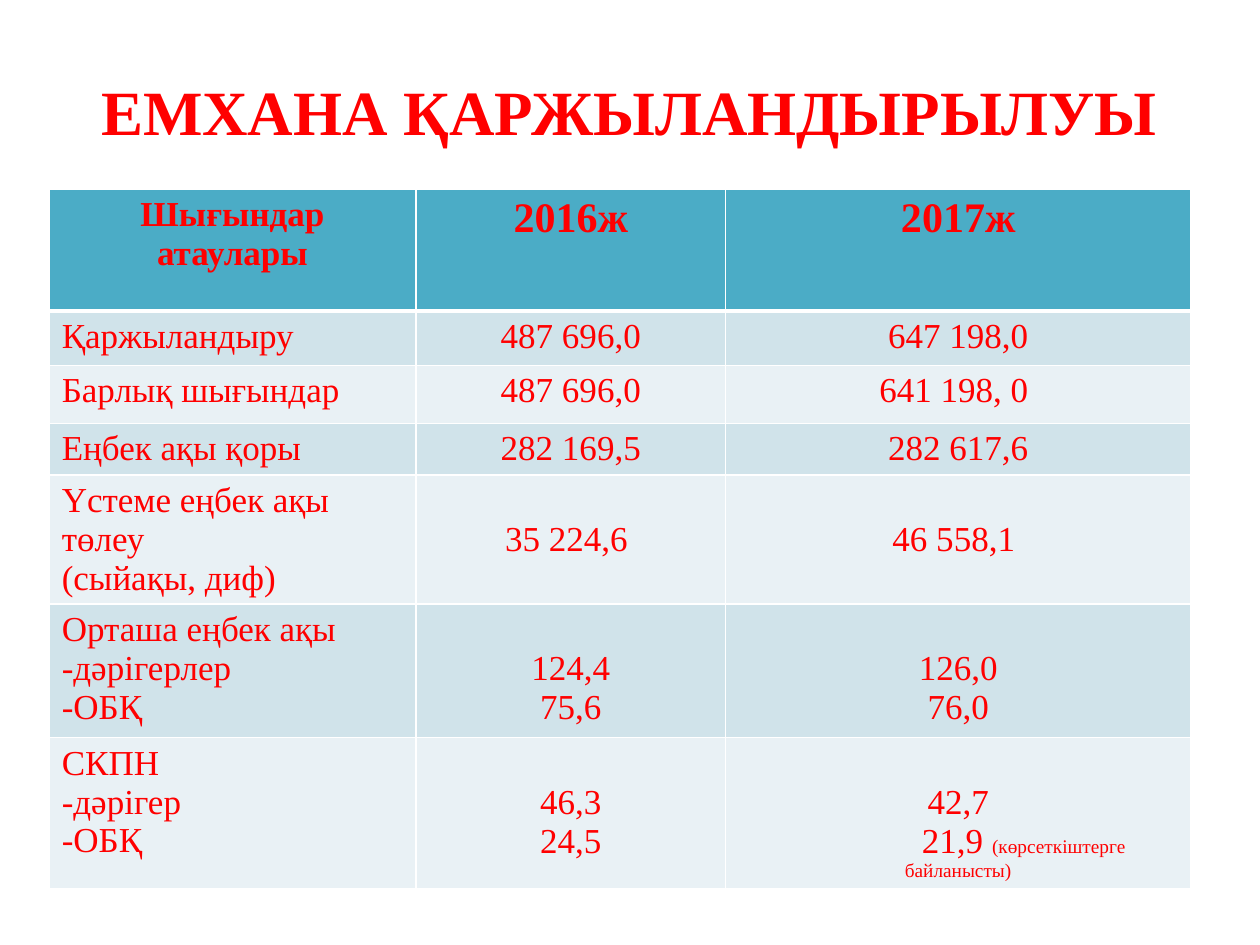
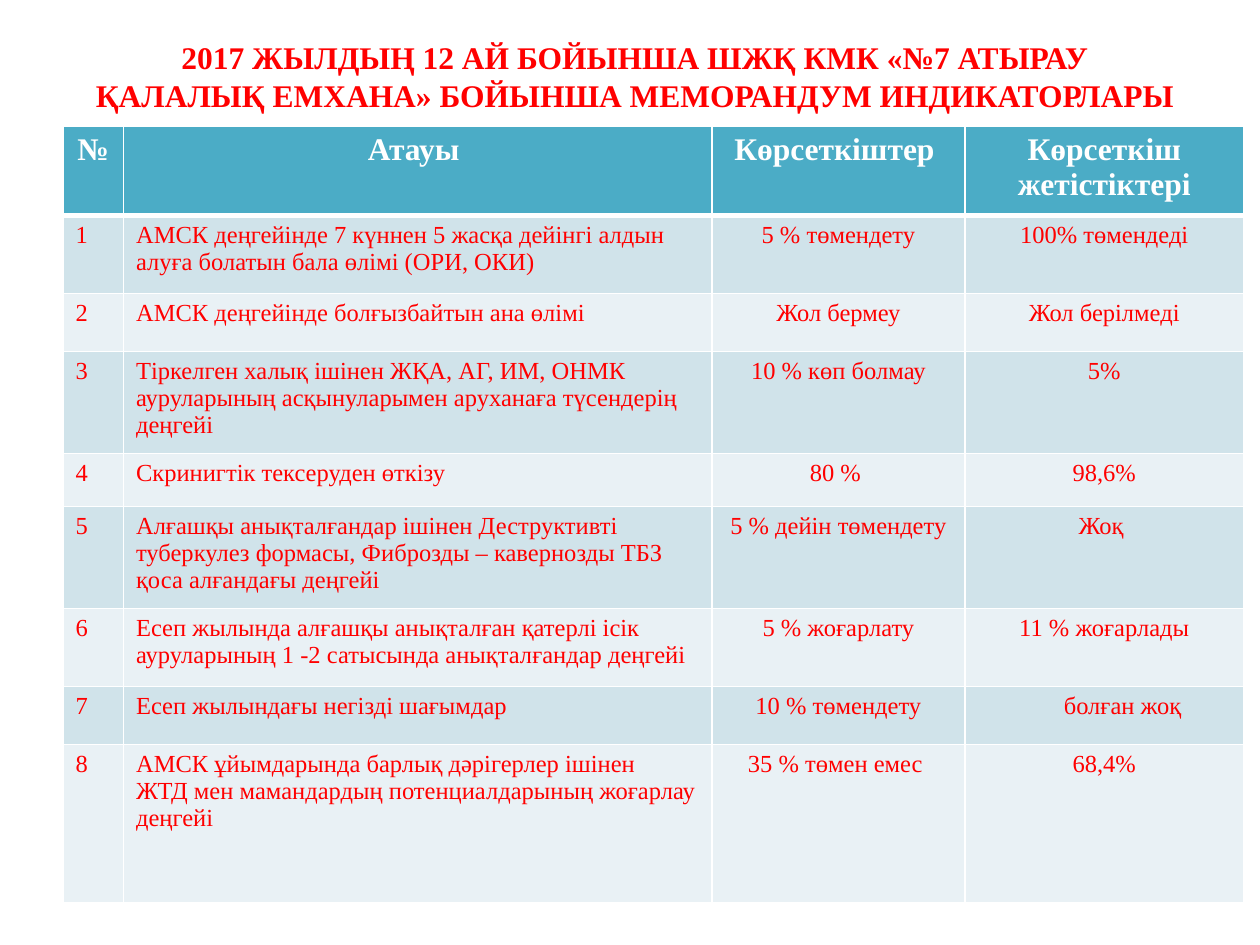
from dataclasses import dataclass
from lxml.etree import SubElement
from pptx import Presentation
from pptx.dml.color import RGBColor
from pptx.enum.text import MSO_ANCHOR, PP_ALIGN
from pptx.oxml.ns import qn
from pptx.util import Inches, Pt


@dataclass(frozen=True)
class Theme:
    face: str = "Times New Roman"
    red: str = "FF0000"
    white: str = "FFFFFF"
    head: str = "4BACC6"
    bands: tuple = ("D0E3EA", "E9F1F5")
    title: int = 36
    year: int = 24
    body: int = 20
    label: int = 18
    small: int = 14
    note: int = 11
    thin: int = 1
    thick: int = 3


THEME = Theme()

COSTS = [
    ("Шығындар атаулары", "2016ж", "2017ж"),
    ("Қаржыландыру", "487 696,0", "647 198,0"),
    ("Барлық шығындар", "487 696,0", "641 198, 0 "),
    ("Еңбек ақы қоры", "282 169,5", "282 617,6"),
    ("Үстеме еңбек ақы төлеу\n(сыйақы, диф)", "35 224,6 ", "46 558,1 "),
    ("Орташа еңбек ақы\n-дәрігерлер\n-ОБҚ", "124,4\n75,6", "126,0\n76,0"),
    ("СКПН\n-дәрігер\n-ОБҚ", "46,3\n24,5", "42,7\n21,9 "),
]

GOALS = [
    ("№", "Атауы ", "Көрсеткіштер ", "Көрсеткіш жетістіктері"),
    ("1", "АМСК деңгейінде 7 күннен 5 жасқа дейінгі алдын алуға болатын бала өлімі (ОРИ, ОКИ)",
     "5 % төмендету", "100% төмендеді"),
    ("2", "АМСК деңгейінде болғызбайтын ана өлімі", "Жол бермеу", "Жол берілмеді"),
    ("3", "Тіркелген халық ішінен ЖҚА, АГ, ИМ, ОНМК ауруларының асқынуларымен "
     "аруханаға түсендерің деңгейі", "10 % көп болмау", "5%"),
    ("4", "Скринигтік тексеруден өткізу", "80 % ", "98,6%"),
    ("5", "Алғашқы анықталғандар ішінен Деструктивті туберкулез формасы, "
     "Фиброзды – кавернозды ТБЗ қоса алғандағы деңгейі", "5 % дейін төмендету", "Жоқ "),
    ("6", "Есеп жылында алғашқы анықталған қатерлі ісік ауруларының 1 -2 сатысында "
     "анықталғандар деңгейі", "5 % жоғарлату", "11 % жоғарлады"),
    ("7", "Есеп жылындағы негізді шағымдар", "10 % төмендету", "болған жоқ"),
    ("8", "АМСК ұйымдарында барлық дәрігерлер ішінен\vЖТД мен мамандардың "
     "потенциалдарының жоғарлау деңгейі", "35 % төмен емес ", "68,4%"),
]


def style(para, size, color, bold, align):
    para.alignment = align
    font = para.font
    font.name = THEME.face
    font.size = Pt(size)
    font.bold = bold
    font.color.rgb = RGBColor.from_string(color)


def add_slide(deck, text, size, box):
    slide = deck.slides.add_slide(deck.slide_layouts[5])
    title = slide.shapes.title
    title.left, title.top, title.width, title.height = map(Inches, box)
    frame = title.text_frame
    frame.word_wrap = True
    frame.vertical_anchor = MSO_ANCHOR.MIDDLE
    frame.text = text
    style(frame.paragraphs[0], size, THEME.red, True, PP_ALIGN.CENTER)
    return slide


def add_edges(cell, row):
    props = cell._tc.get_or_add_tcPr()
    heavy = {0: "lnB", 1: "lnT"}.get(row)
    for side in ("lnL", "lnR", "lnT", "lnB"):
        width = THEME.thick if side == heavy else THEME.thin
        line = SubElement(props, qn(f"a:{side}"), w=str(Pt(width)))
        fill = SubElement(line, qn("a:solidFill"))
        SubElement(fill, qn("a:srgbClr"), val=THEME.white)


def fill_cell(cell, text, row, size, color, align):
    add_edges(cell, row)
    shade = THEME.bands[(row - 1) % 2] if row else THEME.head
    cell.fill.solid()
    cell.fill.fore_color.rgb = RGBColor.from_string(shade)
    cell.text_frame.text = text
    for para in cell.text_frame.paragraphs:
        style(para, size, color, row == 0, align)


def add_grid(slide, data, spot, widths, heights, heads, ink, size, left):
    left_in, top = spot
    frame = slide.shapes.add_table(
        len(data), len(widths), Inches(left_in), Inches(top),
        Inches(sum(widths)), Inches(sum(heights)))
    grid = frame.table
    for col, width in zip(grid.columns, widths):
        col.width = Inches(width)
    for line, height in zip(grid.rows, heights):
        line.height = Inches(height)
    for row, texts in enumerate(data):
        for col, text in enumerate(texts):
            cell = grid.cell(row, col)
            align = PP_ALIGN.LEFT if row and col < left else PP_ALIGN.CENTER
            fill_cell(cell, text, row, size if row else heads[col],
                      THEME.red if row else ink, align)
            if col and "\n" in texts[0]:
                cell.margin_top = Inches(0.36)
    return grid


def indent(para, inches):
    para._p.get_or_add_pPr().set("indent", str(Inches(inches)))


def add_costs(deck):
    slide = add_slide(deck, "ЕМХАНА ҚАРЖЫЛАНДЫРЫЛУЫ", THEME.title, (0.66, 0.52, 8.67, 0.71))
    grid = add_grid(
        slide, COSTS, (0.39, 1.5), (2.91, 2.46, 3.69),
        (0.97, 0.43, 0.46, 0.41, 0.99, 1.06, 1.06),
        (THEME.body, THEME.year, THEME.year), THEME.red, THEME.body, 1)
    para = grid.cell(6, 2).text_frame.paragraphs[-1]
    indent(para, 1.04)
    note = para.add_run()
    note.text = "(көрсеткіштерге байланысты)"
    note.font.size = Pt(THEME.note)


def add_goals(deck):
    text = ("2017 ЖЫЛДЫҢ 12 АЙ БОЙЫНША ШЖҚ КМК «№7 АТЫРАУ\v"
            "ҚАЛАЛЫҚ ЕМХАНА» БОЙЫНША МЕМОРАНДУМ ИНДИКАТОРЛАРЫ")
    slide = add_slide(deck, text, THEME.label, (0.47, 0.25, 9.14, 0.71))
    grid = add_grid(
        slide, GOALS, (0.5, 1), (0.48, 4.67, 2.01, 2.21),
        (0.71, 0.62, 0.46, 0.81, 0.42, 0.81, 0.62, 0.46, 1.26),
        (THEME.label,) * 4, THEME.white, THEME.small, 2)
    indent(grid.cell(7, 3).text_frame.paragraphs[0], 0.29)


def main():
    deck = Presentation()
    deck.slide_width, deck.slide_height = Inches(10), Inches(7.5)
    add_costs(deck)
    add_goals(deck)
    deck.save("out.pptx")


if __name__ == "__main__":
    main()
